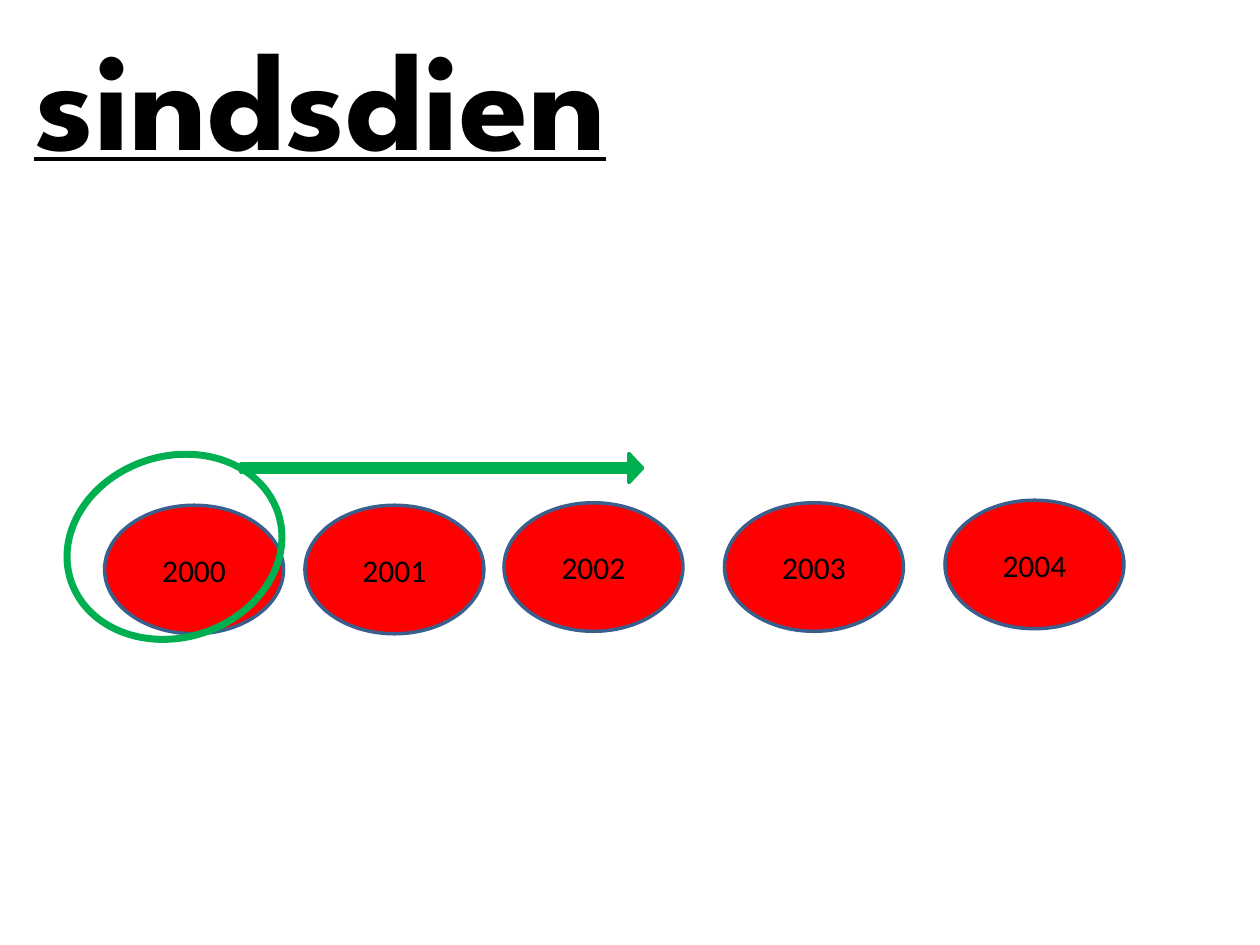
import pptx
import pptx.util
import pptx.dml.color
import pptx.enum.shapes
import pptx.enum.text

Inches = pptx.util.Inches
Pt = pptx.util.Pt
SHAPES = pptx.enum.shapes.MSO_SHAPE
ALIGN = pptx.enum.text.PP_ALIGN
ANCHOR = pptx.enum.text.MSO_ANCHOR

WIDTH, HEIGHT = 10, 7.5
HEADING = "sindsdien"
YEARS = [
    ("2000", 0.83, 4.01),
    ("2001", 2.42, 4.01),
    ("2002", 4.0, 3.99),
    ("2003", 5.75, 3.99),
    ("2004", 7.5, 3.97),
]
YEAR_SIZE = (1.42, 1.02)
PERIOD_ARROW = (1.91, 3.6, 3.19, 0.23)
START_RING = (0.52, 3.62, 1.73, 1.44)
RED, BLUE, GREEN, BLACK = "FF0000", "3A5F8C", "00B050", "000000"


def color(value):
    return pptx.dml.color.RGBColor.from_string(value)


def add_figure(slide, kind, box, fill, outline, weight):
    figure = slide.shapes.add_shape(kind, *map(Inches, box))
    figure.shadow.inherit = False
    if fill:
        figure.fill.solid()
        figure.fill.fore_color.rgb = color(fill)
    else:
        figure.fill.background()
    figure.line.color.rgb = color(outline)
    figure.line.width = Pt(weight)
    return figure


def write(frame, text, font_name, size, align, anchor):
    frame.text = text
    frame.word_wrap = True
    frame.vertical_anchor = anchor
    paragraph = frame.paragraphs[0]
    paragraph.alignment = align
    paragraph.font.name = font_name
    paragraph.font.size = Pt(size)
    paragraph.font.color.rgb = color(BLACK)
    return paragraph.font


def main():
    deck = pptx.Presentation()
    deck.slide_width, deck.slide_height = Inches(WIDTH), Inches(HEIGHT)
    slide = deck.slides.add_slide(deck.slide_layouts[5])

    heading = slide.shapes.title
    heading.left, heading.top, heading.width, heading.height = map(
        Inches, (0.17, 0.03, WIDTH - 0.17, 1.45))
    heading_font = write(heading.text_frame, HEADING, "League Spartan", 80,
                         ALIGN.LEFT, ANCHOR.TOP)
    heading_font.bold = True
    heading_font.underline = True
    heading.text_frame.auto_size = pptx.enum.text.MSO_AUTO_SIZE.SHAPE_TO_FIT_TEXT

    for year, left, top in YEARS:
        oval = add_figure(slide, SHAPES.OVAL, (left, top, *YEAR_SIZE), RED, BLUE, 2)
        write(oval.text_frame, year, "Calibri", 18, ALIGN.CENTER, ANCHOR.MIDDLE)

    arrow = add_figure(slide, SHAPES.RIGHT_ARROW, PERIOD_ARROW, GREEN, GREEN, 2)
    arrow.adjustments[0] = 0.29
    arrow.adjustments[1] = 0.47

    ring = add_figure(slide, SHAPES.OVAL, START_RING, None, GREEN, 4)
    ring.rotation = 342.3

    deck.save("out.pptx")


if __name__ == "__main__":
    main()
